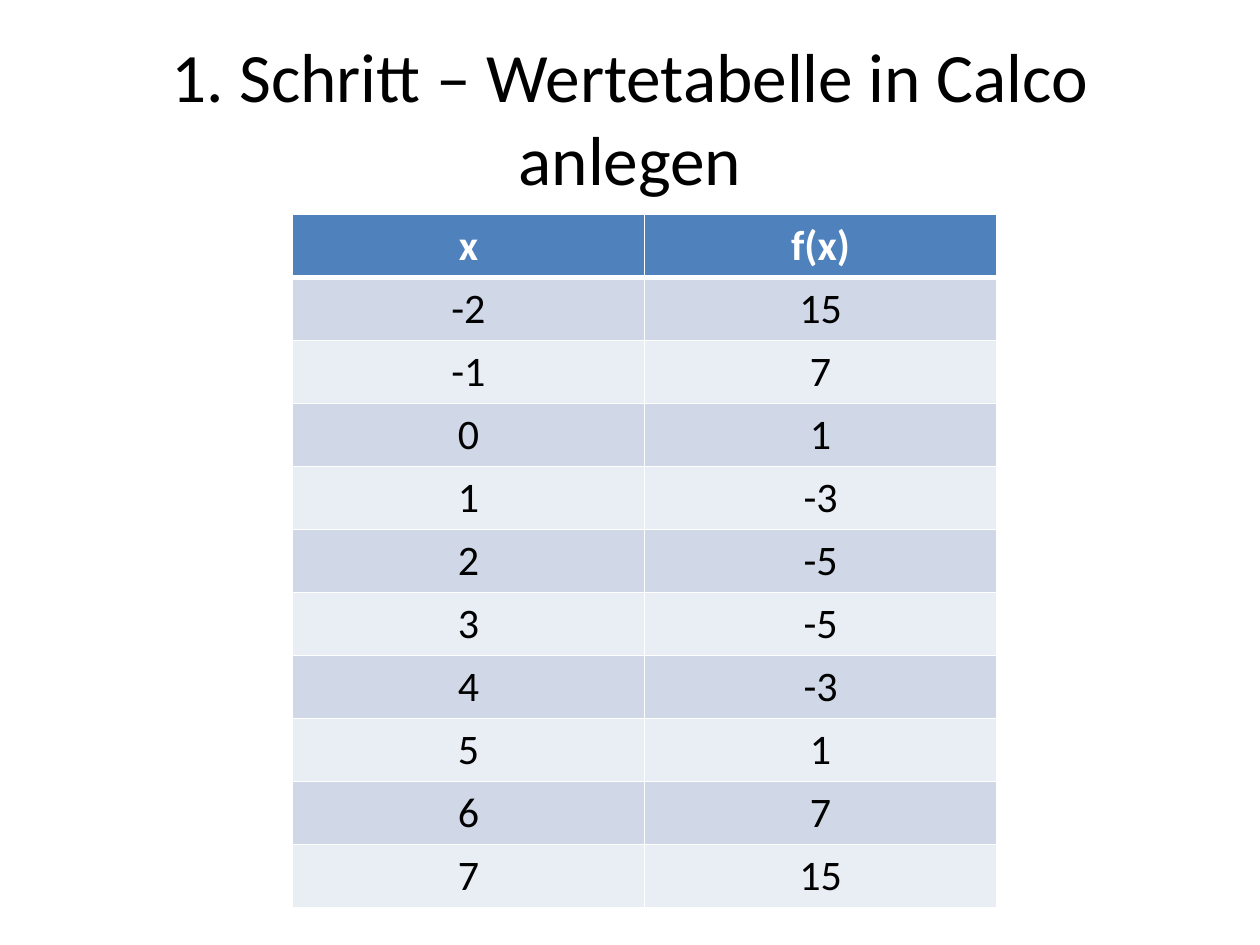
from lxml import etree
from pptx import Presentation
from pptx.dml.color import RGBColor
from pptx.enum.text import MSO_ANCHOR, PP_ALIGN
from pptx.oxml.ns import qn
from pptx.util import Inches, Pt

CENTER = PP_ALIGN.CENTER
MIDDLE = MSO_ANCHOR.MIDDLE
FONT = "Calibri"
COLORS = {
    "text": "000000",
    "header": "4F81BD",
    "header_text": "FFFFFF",
    "odd_row": "D0D8E8",
    "even_row": "E9EDF4",
    "border": "FFFFFF",
}
HEADINGS = ("x", "f(x)")
X_VALUES = range(-2, 8)
F_VALUES = (15, 7, 1, -3, -5, -5, -3, 1, 7, 15)


def style_text(paragraph, size, color, bold=False):
    paragraph.alignment = CENTER
    for run in paragraph.runs:
        run.font.name = FONT
        run.font.size = Pt(size)
        run.font.bold = bold
        run.font.color.rgb = RGBColor.from_string(COLORS[color])


def set_borders(cell, widths):
    properties = cell._tc.get_or_add_tcPr()
    for side, width in widths.items():
        line = etree.SubElement(properties, qn(f"a:ln{side}"), w=str(Pt(width)))
        fill = etree.SubElement(line, qn("a:solidFill"))
        etree.SubElement(fill, qn("a:srgbClr"), val=COLORS["border"])


def add_title(slide, left, top, width, height):
    title = slide.shapes.add_textbox(left, top, width, height).text_frame
    title.word_wrap = True
    title.vertical_anchor = MIDDLE
    title.text = "1. Schritt – Wertetabelle in Calco anlegen"
    style_text(title.paragraphs[0], 39.6, "text")


def add_value_table(slide, left, top, width, height):
    rows = [HEADINGS, *zip(X_VALUES, F_VALUES)]
    table = slide.shapes.add_table(
        len(rows), len(HEADINGS), left, top, width, height
    ).table
    for row, values in enumerate(rows):
        is_header = row == 0
        band = "header" if is_header else "odd_row" if row % 2 else "even_row"
        widths = {
            "L": 1,
            "R": 1,
            "T": 3 if row == 1 else 1,
            "B": 3 if is_header else 1,
        }
        for column, value in enumerate(values):
            cell = table.cell(row, column)
            cell.text = str(value)
            set_borders(cell, widths)
            cell.fill.solid()
            cell.fill.fore_color.rgb = RGBColor.from_string(COLORS[band])
            style_text(
                cell.text_frame.paragraphs[0],
                24,
                "header_text" if is_header else "text",
                is_header,
            )


def main():
    presentation = Presentation()
    presentation.slide_width = Inches(10)
    presentation.slide_height = Inches(7.5)
    slide = presentation.slides.add_slide(presentation.slide_layouts[6])
    add_title(slide, Inches(0.5), Inches(0.3), Inches(9), Inches(1.25))
    add_value_table(slide, Inches(2.32), Inches(1.7), Inches(5.59), Inches(5.5))
    presentation.save("out.pptx")


if __name__ == "__main__":
    main()
